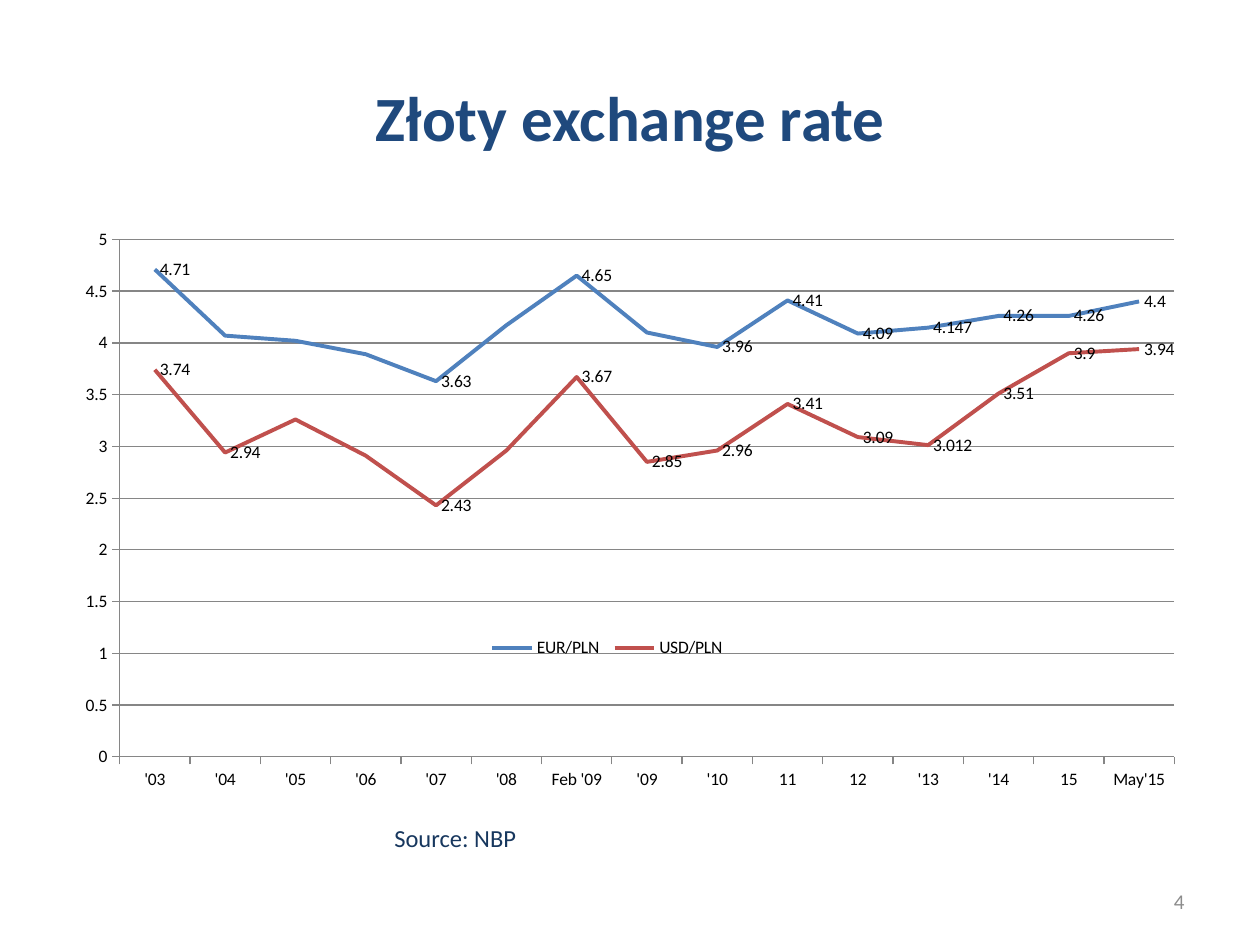
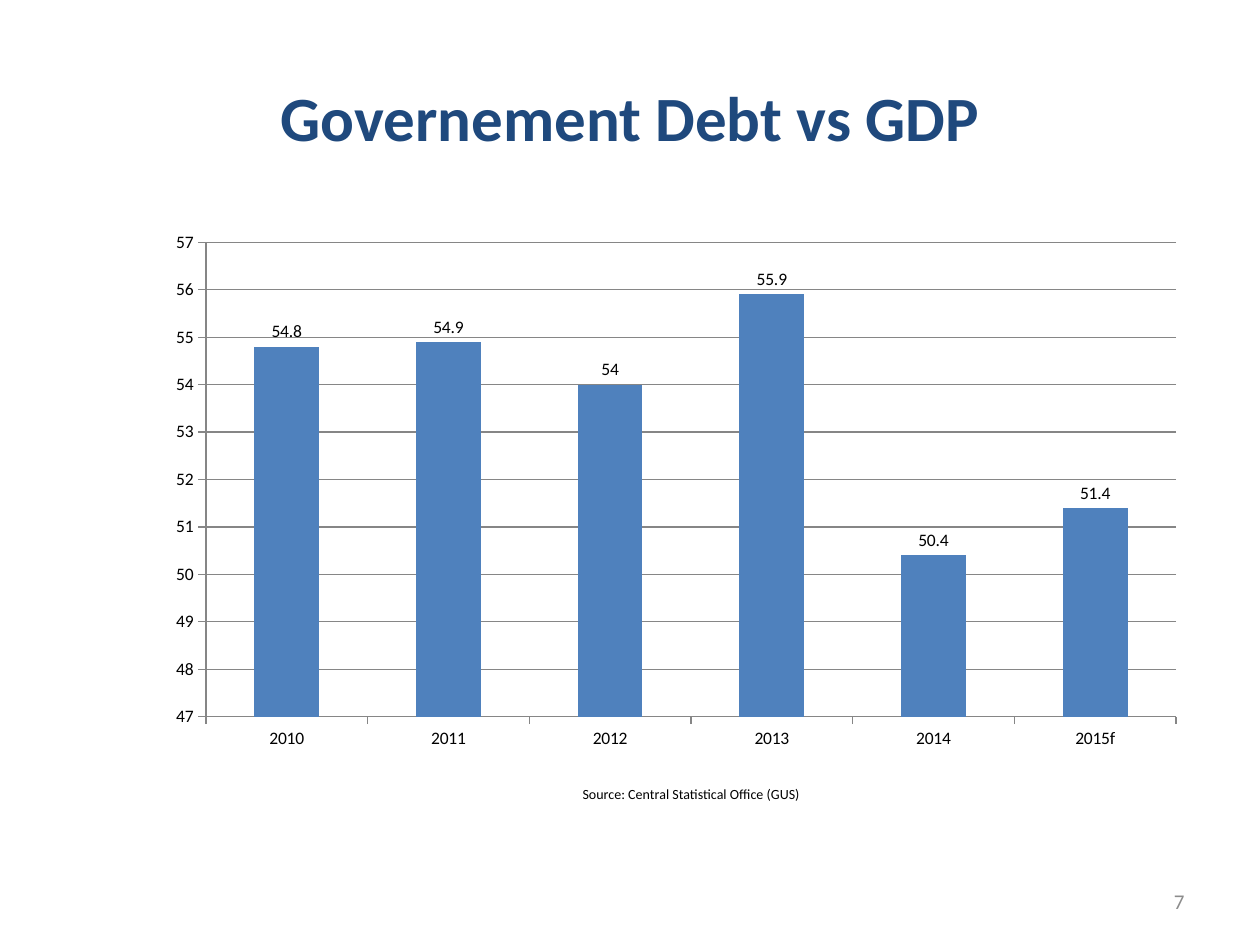
from dataclasses import dataclass
from lxml import etree
from pptx import Presentation
from pptx.chart.data import CategoryChartData
from pptx.dml.color import RGBColor
from pptx.enum.chart import (XL_CHART_TYPE, XL_LABEL_POSITION,
                             XL_LEGEND_POSITION, XL_TICK_MARK)
from pptx.enum.text import MSO_ANCHOR, MSO_AUTO_SIZE, PP_ALIGN
from pptx.oxml.ns import qn
from pptx.util import Cm, Pt

LINE, COLUMN = XL_CHART_TYPE.LINE, XL_CHART_TYPE.COLUMN_CLUSTERED
AFTER, ABOVE = XL_LABEL_POSITION.RIGHT, XL_LABEL_POSITION.OUTSIDE_END
BOTTOM = XL_LEGEND_POSITION.BOTTOM
OUT, NONE = XL_TICK_MARK.OUTSIDE, XL_TICK_MARK.NONE
LEFT, CENTER, RIGHT = PP_ALIGN.LEFT, PP_ALIGN.CENTER, PP_ALIGN.RIGHT
MIDDLE, TOP = MSO_ANCHOR.MIDDLE, MSO_ANCHOR.TOP
FIT = MSO_AUTO_SIZE.SHAPE_TO_FIT_TEXT

FACE = "Calibri"
NAVY, INK, GRAY, GRID, BLACK = "1F497D", "17375E", "8C8C8C", "868686", "000000"
BLUE, RED = "4F81BD", "C0504D"
TITLE_ONLY = 5

Box = tuple[float, float, float, float]


@dataclass
class Series:
    name: str
    color: str
    values: list[float]
    bare: tuple[int, ...] = ()


@dataclass
class Graph:
    kind: int
    box: Box
    plot: Box
    scale: tuple[float, float, float]
    cats: list[str]
    series: list[Series]
    legend: Box | None = None


@dataclass
class Note:
    text: str
    box: Box
    size: float
    color: str
    align: int = LEFT


@dataclass
class Page:
    title: str
    number: str
    graph: Graph
    source: Note


PAGES = [
    Page("Złoty exchange rate", "4",
         Graph(LINE, (1.27, 4.45, 22.86, 12.57), (0.05, 0.03, 0.93, 0.83),
               (0, 5, 0.5),
               ["'03", "'04", "'05", "'06", "'07", "'08", "Feb '09", "'09",
                "'10", "11", "12", "'13", "'14", "15", "May'15"],
               [Series("EUR/PLN", BLUE,
                       [4.71, 4.07, 4.02, 3.89, 3.63, 4.17, 4.65, 4.1,
                        3.96, 4.41, 4.09, 4.147, 4.26, 4.26, 4.4],
                       (1, 2, 3, 5, 7)),
                Series("USD/PLN", RED,
                       [3.74, 2.94, 3.26, 2.91, 2.43, 2.96, 3.67, 2.85,
                        2.96, 3.41, 3.09, 3.012, 3.51, 3.9, 3.94],
                       (2, 3, 5))],
               (0.37, 0.66, 0.22, 0.05)),
         Note("Source: NBP", (7.7, 16.46, 3, 0.86), 14, INK)),
    Page("Governement Debt vs GDP", "7",
         Graph(COLUMN, (3.1, 4.45, 21.03, 10.87), (0.05, 0.04, 0.93, 0.88),
               (47, 57, 1),
               ["2010", "2011", "2012", "2013", "2014", "2015f"],
               [Series("Series 1", BLUE,
                       [54.8, 54.9, 54, 55.9, 50.4, 51.4])]),
         Note("Source: Central Statistical Office (GUS)",
              (11.46, 15.72, 4.95, 0.61), 8, BLACK, CENTER)),
]


def rgb(code: str) -> RGBColor:
    return RGBColor.from_string(code)


def style(font, size: float, color: str, bold: bool = False) -> None:
    font.name, font.size, font.bold = FACE, Pt(size), bold
    font.color.rgb = rgb(color)


def add_title(slide, text: str) -> None:
    title = slide.shapes.title
    title.left, title.top, title.width, title.height = map(
        Cm, (1.27, 0.76, 22.86, 3.18))
    frame = title.text_frame
    frame.text, frame.vertical_anchor = text, MIDDLE
    para = frame.paragraphs[0]
    para.alignment = CENTER
    style(para.font, 36, NAVY, True)


def add_note(slide, note: Note, fit: bool = True) -> None:
    frame = slide.shapes.add_textbox(*map(Cm, note.box)).text_frame
    frame.text, frame.word_wrap = note.text, not fit
    frame.vertical_anchor = TOP if fit else MIDDLE
    if fit:
        frame.auto_size = FIT
    para = frame.paragraphs[0]
    para.alignment = note.align
    style(para.font, note.size, note.color)


def place(part, index: int, box: Box, inner: bool = False) -> None:
    for old in part.findall(qn("c:layout")):
        part.remove(old)
    layout = etree.Element(qn("c:layout"))
    manual = etree.SubElement(layout, qn("c:manualLayout"))
    items = [("layoutTarget", "inner")] if inner else []
    items += [("xMode", "edge"), ("yMode", "edge")]
    items += zip("xywh", map(str, box))
    for tag, value in items:
        etree.SubElement(manual, qn(f"c:{tag}")).set("val", value)
    part.insert(index, layout)


def hide_labels(labels, points: tuple[int, ...]) -> None:
    for spot, point in enumerate(points):
        label = etree.Element(qn("c:dLbl"))
        etree.SubElement(label, qn("c:idx")).set("val", str(point))
        etree.SubElement(label, qn("c:delete")).set("val", "1")
        labels.insert(spot, label)


def set_axes(chart, scale: tuple[float, float, float]) -> None:
    axis = chart.value_axis
    axis.minimum_scale, axis.maximum_scale, axis.major_unit = scale
    axis.has_major_gridlines = True
    chart.category_axis.has_major_gridlines = False
    for item in (axis, chart.category_axis):
        item.major_tick_mark, item.minor_tick_mark = OUT, NONE
        item.tick_labels.number_format = "General"
        item.tick_labels.number_format_is_linked = False
    for item in (axis, chart.category_axis, axis.major_gridlines):
        item.format.line.color.rgb = rgb(GRID)
        item.format.line.width = Pt(0.75)


def paint(item, data: Series, kind: int) -> None:
    if kind == LINE:
        item.smooth = False
        item.format.line.color.rgb = rgb(data.color)
        item.format.line.width = Pt(2.25)
    else:
        item.format.fill.solid()
        item.format.fill.fore_color.rgb = rgb(data.color)
    labels = item.data_labels
    labels.show_value = True
    labels.position = AFTER if kind == LINE else ABOVE
    style(labels.font, 10, BLACK)
    hide_labels(item._element.find(qn("c:dLbls")), data.bare)


def add_graph(slide, graph: Graph) -> None:
    data = CategoryChartData()
    data.categories = graph.cats
    for row in graph.series:
        data.add_series(row.name, row.values)
    chart = slide.shapes.add_chart(
        graph.kind, *map(Cm, graph.box), data).chart
    chart.has_title = False
    style(chart.font, 10, BLACK)
    set_axes(chart, graph.scale)
    plot = chart.plots[0]
    plot.vary_by_categories = False
    if graph.kind == COLUMN:
        plot.gap_width = 150
    for item, row in zip(plot.series, graph.series):
        paint(item, row, graph.kind)
    area = chart._chartSpace.find(f".//{qn('c:plotArea')}")
    place(area, 0, graph.plot, True)
    chart.has_legend = graph.legend is not None
    if graph.legend:
        chart.legend.position = BOTTOM
        chart.legend.include_in_layout = False
        style(chart.legend.font, 10, BLACK)
        place(chart.legend._element, 1, graph.legend)


def main() -> None:
    deck = Presentation()
    deck.slide_width, deck.slide_height = Cm(25.4), Cm(19.05)
    for page in PAGES:
        slide = deck.slides.add_slide(deck.slide_layouts[TITLE_ONLY])
        add_title(slide, page.title)
        add_graph(slide, page.graph)
        add_note(slide, page.source)
        add_note(slide, Note(page.number, (18.2, 17.66, 5.93, 1.01),
                             12, GRAY, RIGHT), False)
    deck.save("out.pptx")


if __name__ == "__main__":
    main()
